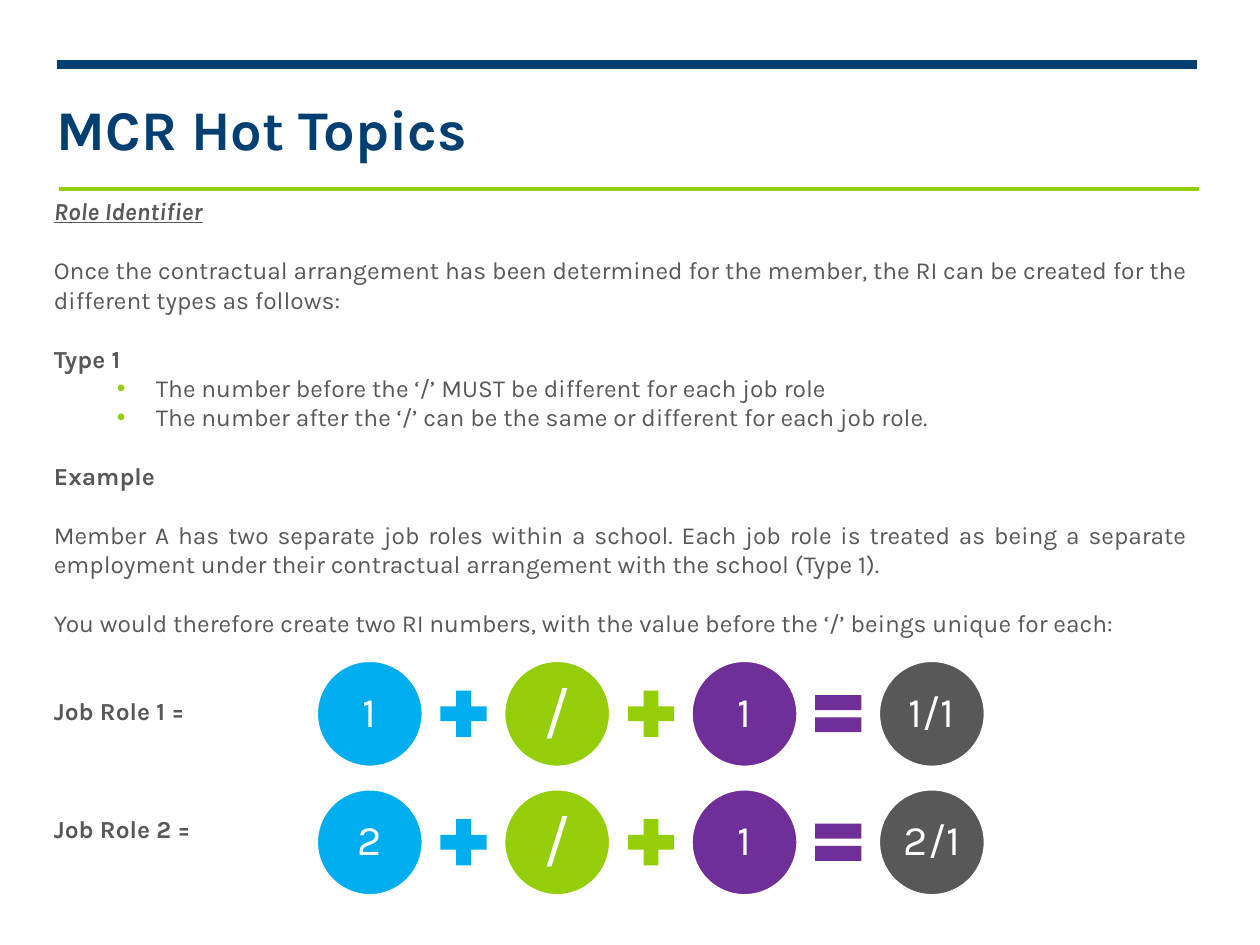
from lxml import etree
from pptx import Presentation
from pptx import util as u
from pptx.dml.color import RGBColor
from pptx.enum import shapes, text
from pptx.oxml import ns

NAVY, GREEN, BLUE = "003F72", "94CE09", "00AEEF"
PURPLE, GREY, WHITE = "702E99", "585858", "FFFFFF"
SHAPE = shapes.MSO_SHAPE
ALIGN = text.PP_ALIGN


def colour(value):
    return RGBColor.from_string(value)


class SlideBuilder:
    font = "Karla"
    body_size = 14
    line_height = 16.8

    def __init__(self, prs):
        self.s = prs.slides.add_slide(prs.slide_layouts[5])

    def style(self, p, size, hex_colour, bold=False):
        for r in p.runs:
            r.font.name = self.font
            r.font.size = u.Pt(size)
            r.font.bold = bold
            r.font.color.rgb = colour(hex_colour)

    def frame(self, tf, anchor, inset_x=0, inset_y=0):
        tf.word_wrap = True
        tf.vertical_anchor = anchor
        tf.margin_left = tf.margin_right = u.Inches(inset_x)
        tf.margin_top = tf.margin_bottom = u.Inches(inset_y)

    def title(self, words, x, y, w, h):
        sp = self.s.shapes.title
        sp.left, sp.top = u.Inches(x), u.Inches(y)
        sp.width, sp.height = u.Inches(w), u.Inches(h)
        tf = sp.text_frame
        tf.text = words
        self.frame(tf, text.MSO_ANCHOR.BOTTOM)
        tf.paragraphs[0].alignment = ALIGN.LEFT
        self.style(tf.paragraphs[0], 32, NAVY, True)

    def shape(self, kind, x, y, w, h, fill, line_width=0, parent=None):
        parent = parent or self.s
        sp = parent.shapes.add_shape(
            kind, u.Inches(x), u.Inches(y), u.Inches(w), u.Inches(h))
        sp.shadow.inherit = False
        sp.fill.solid()
        sp.fill.fore_color.rgb = colour(fill)
        if line_width:
            sp.line.color.rgb = colour(WHITE)
            sp.line.width = u.Pt(line_width)
        else:
            sp.line.fill.background()
        return sp

    def circle(self, group, words, x, y, d, fill, size):
        sp = self.shape(SHAPE.OVAL, x, y, d, d, fill, 2, group)
        tf = sp.text_frame
        tf.text = words
        self.frame(tf, text.MSO_ANCHOR.MIDDLE, 0.03, 0.03)
        p = tf.paragraphs[0]
        p.alignment = ALIGN.CENTER
        p.line_spacing = 0.9
        self.style(p, size, WHITE)

    def bullet(self, p):
        pPr = p._p.get_or_add_pPr()
        pPr.set("marL", str(u.Inches(0.81)))
        pPr.set("indent", str(u.Inches(-0.31)))
        clr = etree.SubElement(pPr, ns.qn("a:buClr"))
        etree.SubElement(clr, ns.qn("a:srgbClr"), val=GREEN)
        etree.SubElement(pPr, ns.qn("a:buFont"), typeface="Arial")
        etree.SubElement(pPr, ns.qn("a:buChar"), char="•")

    def body(self, rows, x, y, w, h):
        tf = self.s.shapes.add_textbox(
            u.Inches(x), u.Inches(y), u.Inches(w), u.Inches(h)).text_frame
        self.frame(tf, text.MSO_ANCHOR.TOP, 0.1, 0.05)
        for i, (words, kind, gap_lines) in enumerate(rows):
            p = tf.add_paragraph() if i else tf.paragraphs[0]
            p.text = words
            p.alignment = ALIGN.JUSTIFY
            p.space_before = u.Pt(gap_lines * self.line_height)
            self.style(p, self.body_size, GREY, kind in ("heading", "label"))
            if kind == "bullet":
                self.bullet(p)
            if kind == "heading":
                p.runs[0].font.italic = True
                p.runs[0].font.underline = True

    def equation(self, terms, x, y):
        diameter, pitch, sign = 0.85, 1.487, 0.5
        group = self.s.shapes.add_group_shape()
        for i, (words, fill, size, operator) in enumerate(terms):
            left = x + i * pitch
            self.circle(group, words, left, y, diameter, fill, size)
            if operator:
                self.shape(operator, left + 0.92, y + (diameter - sign) / 2,
                           sign, sign, fill, parent=group)


def main():
    prs = Presentation()
    prs.slide_width, prs.slide_height = u.Inches(10), u.Inches(7.5)
    b = SlideBuilder(prs)
    b.shape(SHAPE.RECTANGLE, 0.45, 0.47, 9.06, 0.08, NAVY, 0.75)
    b.shape(SHAPE.RECTANGLE, 0.46, 1.48, 9.06, 0.04, GREEN, 0.75)
    b.title("MCR Hot Topics", 0.45, 0.74, 9, 0.54)
    b.body([
        ("Role Identifier", "heading", 0),
        ("Once the contractual arrangement has been determined for the member, "
         "the RI can be created for the different types as follows:", "plain", 1),
        ("Type 1", "label", 1),
        ("The number before the ‘/’ MUST be different for each job role",
         "bullet", 0),
        ("The number after the ‘/’ can be the same or different for each job role.",
         "bullet", 0),
        ("Example", "label", 1),
        ("Member A has two separate job roles within a school. Each job role is "
         "treated as being a separate employment under their contractual "
         "arrangement with the school (Type 1).", "plain", 1),
        ("You would therefore create two RI numbers, with the value before the "
         "‘/’ beings unique for each:", "plain", 1),
        ("Job Role 1 =", "label", 2),
        ("Job Role 2 =", "label", 3),
    ], 0.33, 1.51, 9.2, 5.52)
    for number, top in (("1", 5.24), ("2", 6.26)):
        b.equation([
            (number, BLUE, 24, SHAPE.MATH_PLUS),
            ("/", GREEN, 36, SHAPE.MATH_PLUS),
            ("1", PURPLE, 24, SHAPE.MATH_EQUAL),
            (f"{number}/1", GREY, 24, None),
        ], 2.51, top)
    prs.save("out.pptx")


if __name__ == "__main__":
    main()
